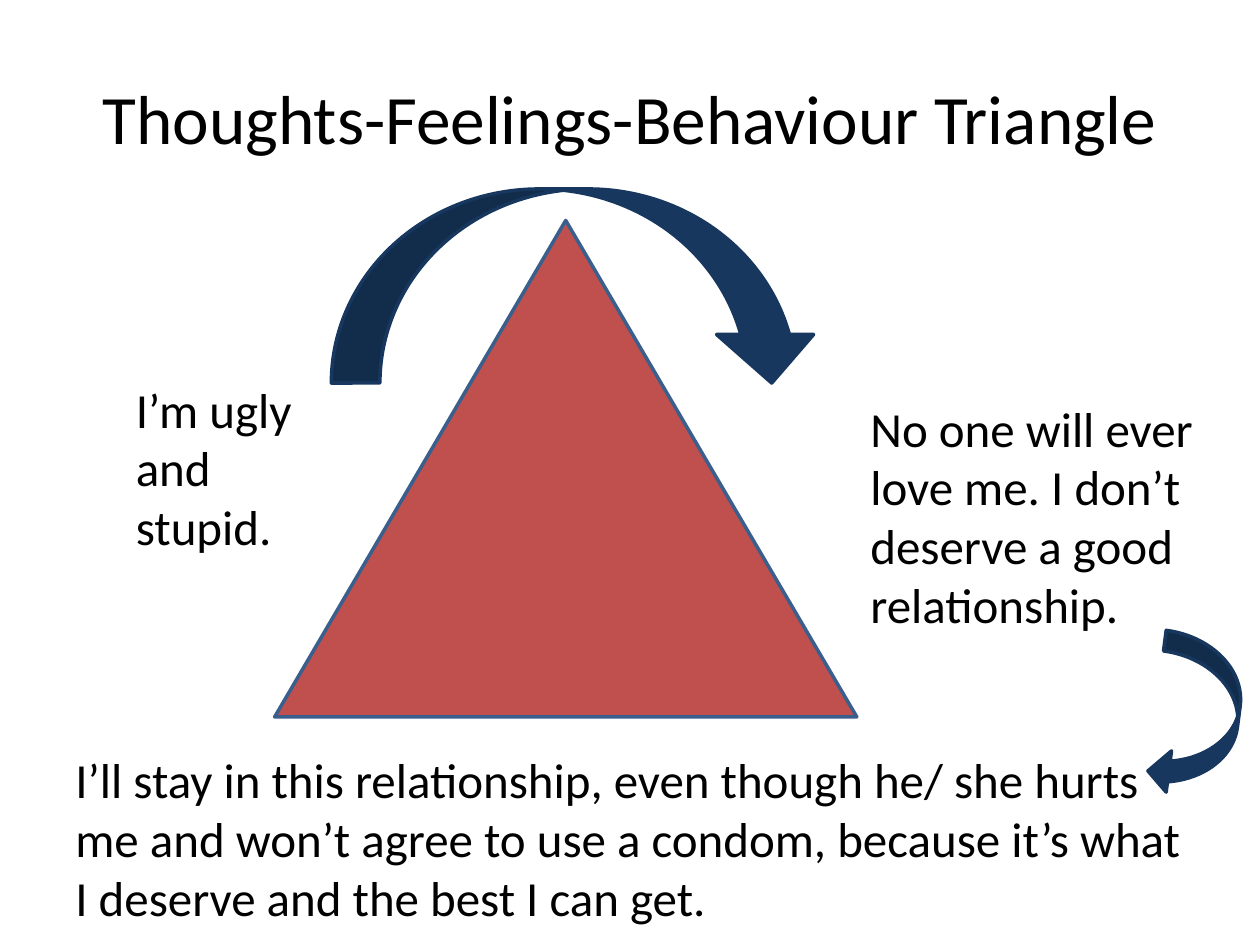
from pptx import Presentation
from pptx.dml.color import RGBColor
from pptx.enum.shapes import MSO_SHAPE as Shape
from pptx.enum.text import MSO_ANCHOR as Anchor, PP_ALIGN as Align
from pptx.util import Inches, Pt


def color(code):
    return RGBColor.from_string(code)


deck = Presentation()
deck.slide_width, deck.slide_height = Inches(10), Inches(7.5)
slide = deck.slides.add_slide(deck.slide_layouts[6])

RED, BLUE, NAVY = "C0504D", "3A5F8C", "17375E"

# Triangle and the arrows around it: kind, place, fill, line, turn
shapes = [
    (Shape.ISOSCELES_TRIANGLE, (2.18, 1.75, 4.62, 3.94), RED, BLUE, 0),
    (Shape.CURVED_DOWN_ARROW, (2.63, 1.5, 3.88, 1.54), NAVY, NAVY, 0),
    (Shape.CURVED_LEFT_ARROW, (9.17, 5.04, 0.66, 1.29), NAVY, NAVY, 7.4),
]
for kind, place, fill, line, turn in shapes:
    shape = slide.shapes.add_shape(kind, *map(Inches, place))
    shape.shadow.inherit = False
    shape.rotation = turn
    shape.fill.solid()
    shape.fill.fore_color.rgb = color(fill)
    shape.line.color.rgb = color(line)
    shape.line.width = Pt(2)

# Title, thought, feeling and behaviour: place, size, align, anchor, text
texts = [
    ((0.5, 0.3, 9, 1.25), 39.6, Align.CENTER, Anchor.MIDDLE,
     "Thoughts-Feelings-Behaviour Triangle"),
    ((0.98, 2.96, 1.7, 1.51), 28, Align.LEFT, Anchor.TOP,
     "I’m ugly and stupid."),
    ((6.81, 3.11, 3.18, 1.99), 28, Align.LEFT, Anchor.TOP,
     "No one will ever love me. I don’t deserve a good relationship."),
    ((0.5, 5.9, 9, 1.51), 28, Align.LEFT, Anchor.TOP,
     "I’ll stay in this relationship, even though he/ she hurts me and won’t "
     "agree to use a condom, because it’s what I deserve and the best I can get."),
]
for place, size, align, anchor, text in texts:
    frame = slide.shapes.add_textbox(*map(Inches, place)).text_frame
    frame.word_wrap = True
    frame.vertical_anchor = anchor
    para = frame.paragraphs[0]
    para.text = text
    para.alignment = align
    for name, value in {"name": "Calibri", "size": Pt(size)}.items():
        setattr(para.font, name, value)
    para.font.color.rgb = color("000000")

deck.save("out.pptx")
